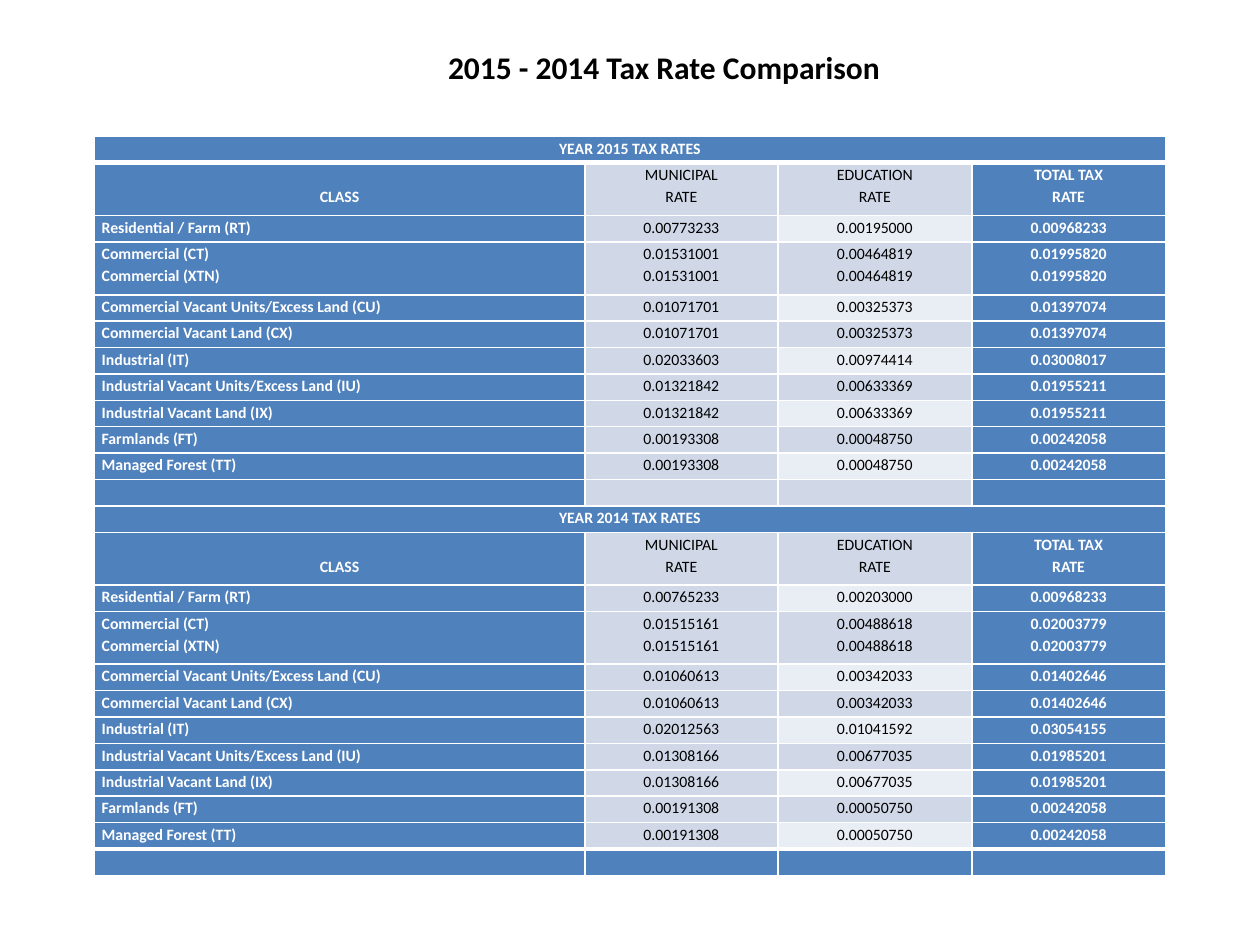
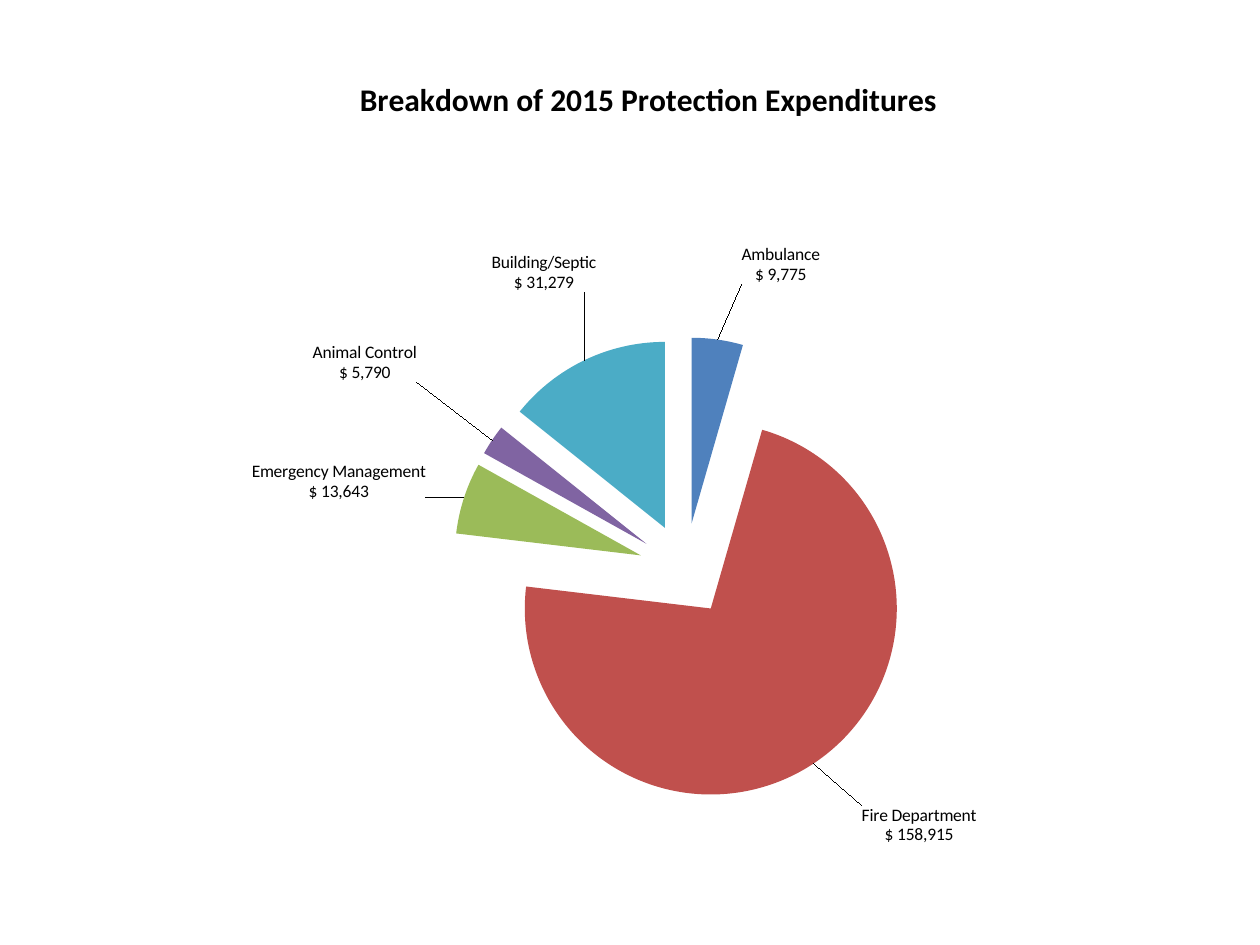
from dataclasses import dataclass

from lxml import etree
from pptx import Presentation
from pptx.chart import data as chart_data
from pptx.dml import color as dml
from pptx.enum import chart as charts, text
from pptx.oxml import ns, parse_xml
from pptx.util import Cm, Pt


@dataclass(frozen=True)
class Theme:
    font: str = "Calibri"
    title_size: int = 18
    table_size: int = 9
    label_size: int = 10
    black: str = "000000"
    white: str = "FFFFFF"
    blue: str = "4F81BD"
    pale: str = "D0D8E8"
    paler: str = "E9EDF4"
    slices: tuple = ("4F81BD", "C0504D", "9BBB59", "8064A2", "4BACC6")


theme = Theme()


def style(font, size, color, bold=False):
    font.name = theme.font
    font.size = Pt(size)
    font.bold = bold
    font.color.rgb = dml.RGBColor.from_string(color)


def place(layout, **settings):
    manual = etree.SubElement(layout, ns.qn("c:manualLayout"))
    for tag, value in settings.items():
        etree.SubElement(manual, ns.qn(f"c:{tag}"), val=str(value))


classes = [
    "Residential / Farm (RT)",
    "Commercial (CT)\nCommercial (XTN)",
    "Commercial Vacant Units/Excess Land (CU)",
    "Commercial Vacant Land (CX)",
    "Industrial (IT)",
    "Industrial Vacant Units/Excess Land (IU)",
    "Industrial Vacant Land (IX)",
    "Farmlands (FT)",
    "Managed Forest (TT)",
]
rates = {
    2015: {
        "municipal": [0.00773233, 0.01531001, 0.01071701, 0.01071701, 0.02033603,
                      0.01321842, 0.01321842, 0.00193308, 0.00193308],
        "education": [0.00195000, 0.00464819, 0.00325373, 0.00325373, 0.00974414,
                      0.00633369, 0.00633369, 0.00048750, 0.00048750],
    },
    2014: {
        "municipal": [0.00765233, 0.01515161, 0.01060613, 0.01060613, 0.02012563,
                      0.01308166, 0.01308166, 0.00191308, 0.00191308],
        "education": [0.00203000, 0.00488618, 0.00342033, 0.00342033, 0.01041592,
                      0.00677035, 0.00677035, 0.00050750, 0.00050750],
    },
}

lines = []
for year, rate in rates.items():
    lines.append([f"YEAR {year} TAX RATES", "", "", ""])
    lines.append(["CLASS", "MUNICIPAL\nRATE", "EDUCATION\nRATE", "TOTAL TAX\nRATE"])
    for tax_class, municipal, education in zip(classes, rate["municipal"], rate["education"]):
        repeats = len(tax_class.split("\n"))
        values = (municipal, education, municipal + education)
        lines.append([tax_class] + ["\n".join([f"{value:.8f}"] * repeats) for value in values])
    lines.append(["", "", "", ""])

deck = Presentation()
deck.slide_width = Cm(25.4)
deck.slide_height = Cm(19.05)
blank = deck.slide_layouts[6]

comparison = deck.slides.add_slide(blank)
heading = comparison.shapes.add_textbox(Cm(2.34), Cm(0.84), Cm(22.1), Cm(1.02)).text_frame
heading.word_wrap = True
heading.text = "2015 - 2014 Tax Rate Comparison"
heading.paragraphs[0].alignment = text.PP_ALIGN.CENTER
style(heading.paragraphs[0].font, theme.title_size, theme.black, True)

line_height = Cm(0.532)
rate_table = comparison.shapes.add_table(
    len(lines), 4, Cm(1.9), Cm(2.75), Cm(21.59), line_height * 28).table
rate_table.first_row = False
rate_table.horz_banding = False
for column, width in zip(rate_table.columns, (9.89, 3.89, 3.91, 3.9)):
    column.width = Cm(width)

last = len(lines) - 1
for r, line in enumerate(lines):
    rate_table.rows[r].height = line_height * (2 if any("\n" in entry for entry in line) else 1)
    is_band = line[0].startswith("YEAR")
    for c, entry in enumerate(line):
        cell = rate_table.cell(r, c)
        is_blue = c in (0, 3) or is_band or r == last
        cell.margin_left = cell.margin_right = Cm(0.15)
        cell.margin_top = cell.margin_bottom = 0
        if entry == "CLASS":
            cell.vertical_anchor = text.MSO_ANCHOR.BOTTOM
            cell.margin_bottom = Cm(0.17)
        cell.text_frame.text = entry
        for paragraph in cell.text_frame.paragraphs:
            paragraph.line_spacing = 1.15
            if c or is_band or entry == "CLASS":
                paragraph.alignment = text.PP_ALIGN.CENTER
            style(paragraph.font, theme.table_size, theme.white if is_blue else theme.black, is_blue)
            if not entry:
                etree.SubElement(paragraph._p, ns.qn("a:endParaRPr"), sz=str(theme.table_size * 100))
        if is_blue:
            shade = theme.blue
        else:
            shade = theme.paler if c == 2 and r % 2 == 0 else theme.pale
        cell.fill.solid()
        cell.fill.fore_color.rgb = dml.RGBColor.from_string(shade)
        thick_sides = {"T"} if r in (1, last) else {"B"} if r in (0, last - 1) else set()
        for position, side in enumerate("LRTB"):
            border = etree.Element(ns.qn(f"a:ln{side}"), w=str(Pt(3 if side in thick_sides else 1)))
            paint = etree.SubElement(border, ns.qn("a:solidFill"))
            etree.SubElement(paint, ns.qn("a:srgbClr"), val=theme.white)
            cell._tc.get_or_add_tcPr().insert(position, border)
    if is_band:
        rate_table.cell(r, 0).merge(rate_table.cell(r, 3))

departments = [
    ("Ambulance", 9775, 2, -5.8),
    ("Fire Department", 158915, 3.8, 4.3),
    ("Emergency Management", 13643, -2.7, 0.7),
    ("Animal Control", 5790, -6, -6.5),
    ("Building/Septic", 31279, 1.3, -7.4),
]
spending = chart_data.CategoryChartData()
spending.categories = [department[0] for department in departments]
spending.add_series("Series 1", [department[1] for department in departments])

breakdown = deck.slides.add_slide(blank)
pie = breakdown.shapes.add_chart(
    charts.XL_CHART_TYPE.PIE, Cm(1.27), Cm(1.07), Cm(23.29), Cm(16.71), spending).chart
pie.has_legend = False
style(pie.font, theme.label_size, theme.black)
pie.has_title = True
pie_title = pie.chart_title.text_frame
pie_title.text = "Breakdown of 2015 Protection Expenditures"
style(pie_title.paragraphs[0].font, theme.title_size, theme.black, True)
style(pie_title.paragraphs[0].runs[0].font, theme.title_size, theme.black, True)
title_xml = pie.chart_title._element
for layout in title_xml.findall(ns.qn("c:layout")):
    title_xml.remove(layout)
title_layout = etree.Element(ns.qn("c:layout"))
title_xml.find(ns.qn("c:tx")).addnext(title_layout)
place(title_layout, xMode="edge", yMode="edge", x=0.252, y=0.022)

plot = pie.plots[0]
plot.vary_by_categories = True
plot_area = plot._element.getparent()
for layout in plot_area.findall(ns.qn("c:layout")):
    plot_area.remove(layout)
plot_layout = etree.Element(ns.qn("c:layout"))
plot_area.insert(0, plot_layout)
place(plot_layout, layoutTarget="inner", xMode="edge", yMode="edge", x=0.144, y=0.343, w=0.789, h=0.561)

expenses = plot.series[0]
for index, shade in enumerate(theme.slices):
    piece = expenses.points[index].format.fill
    piece.solid()
    piece.fore_color.rgb = dml.RGBColor.from_string(shade)
explosion = etree.Element(ns.qn("c:explosion"), val="25")
expenses._element.find(ns.qn("c:tx")).addnext(explosion)

labels_xml = expenses.data_labels._element
for child in list(labels_xml):
    labels_xml.remove(child)
shown = """<c:numFmt formatCode="&quot;$ &quot;#,##0" sourceLinked="0"/>
<c:spPr><a:noFill/><a:ln><a:noFill/></a:ln></c:spPr>
<c:txPr><a:bodyPr/><a:p><a:pPr><a:defRPr sz="%d" b="0"><a:solidFill><a:srgbClr val="%s"/></a:solidFill>
<a:latin typeface="%s"/></a:defRPr></a:pPr><a:endParaRPr/></a:p></c:txPr>
<c:dLblPos val="outEnd"/><c:showLegendKey val="0"/><c:showVal val="1"/><c:showCatName val="1"/>
<c:showSerName val="0"/><c:showPercent val="0"/><c:showBubbleSize val="0"/><c:separator>\n</c:separator>
""" % (theme.label_size * 100, theme.black, theme.font)
for index, (name, amount, shift_x, shift_y) in enumerate(departments):
    label = parse_xml(f'<c:dLbl {ns.nsdecls("c", "a")}><c:idx val="{index}"/><c:layout/>{shown}</c:dLbl>')
    place(label.find(ns.qn("c:layout")), x=shift_x / 100, y=shift_y / 100)
    labels_xml.append(label)
shared = parse_xml(f'<c:dLbls {ns.nsdecls("c", "a")}>{shown}<c:showLeaderLines val="1"/></c:dLbls>')
labels_xml.extend(list(shared))

deck.save("out.pptx")
